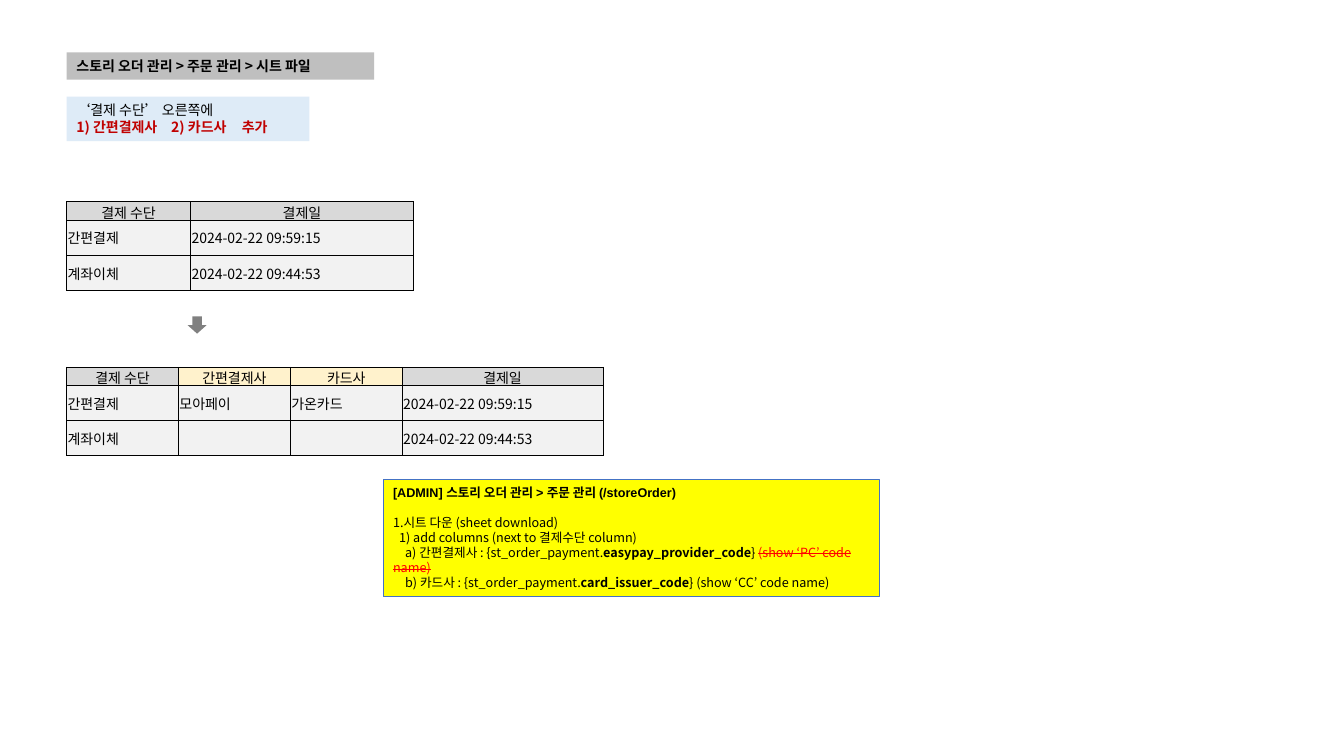
from lxml import etree
from pptx import Presentation
from pptx.dml.color import RGBColor
from pptx.enum.shapes import MSO_SHAPE
from pptx.enum.text import MSO_ANCHOR, MSO_AUTO_SIZE, PP_ALIGN
from pptx.oxml.ns import qn
from pptx.util import Inches, Pt

RECT, DOWN = MSO_SHAPE.RECTANGLE, MSO_SHAPE.DOWN_ARROW
TOP, MIDDLE, BOTTOM = MSO_ANCHOR.TOP, MSO_ANCHOR.MIDDLE, MSO_ANCHOR.BOTTOM
LEFT, CENTER = PP_ALIGN.LEFT, PP_ALIGN.CENTER
GROW = MSO_AUTO_SIZE.SHAPE_TO_FIT_TEXT

SANS, LATIN = "Noto Sans CJK KR", "Arial"
COLORS = {
    "text": "000000", "title": "BFBFBF", "note": "DEEBF7", "alert": "C00000",
    "head": "D9D9D9", "new": "FFF2CC", "body": "F2F2F2", "arrow": "808080",
    "admin": "FFFF00", "edge": "4472C4", "strike": "FF0000",
}
MARGIN = 0.66
ROWS = [0.18, 0.35, 0.35]


def rgb(name):
    return RGBColor.from_string(COLORS[name])


def paint(item, name):
    item.fill.solid()
    item.fill.fore_color.rgb = rgb(name)


def style(para, size=10, font=SANS, color="text", bold=False, align=LEFT,
          indent=0, before=0, tabs=()):
    """Set layout first, then the font shared by the paragraph."""
    para.alignment = align
    props = para._p.get_or_add_pPr()
    if indent:
        props.set("marL", "0")
        props.set("indent", str(Inches(indent)))
    if before:
        para.space_before = Pt(before)
    if tabs:
        stops = etree.SubElement(props, qn("a:tabLst"))
        for pos in tabs:
            etree.SubElement(stops, qn("a:tab"), pos=str(Inches(pos)), algn="l")
    para.font.size, para.font.name, para.font.bold = Pt(size), font, bold
    para.font.color.rgb = rgb(color)
    etree.SubElement(props.find(qn("a:defRPr")), qn("a:ea"), typeface=SANS)


def add_runs(para, parts):
    """Each part is a text and its mark: plain, bold or strike."""
    for text, mark in parts:
        run = para.add_run()
        run.text = text
        if mark == "bold":
            run.font.bold = True
        elif mark == "strike":
            run.font.color.rgb = rgb("strike")
            run.font._element.set("strike", "sngStrike")


def add_block(slide, kind, box, fill, line=None):
    shape = slide.shapes.add_shape(kind, *map(Inches, box))
    shape.shadow.inherit = False
    paint(shape, fill)
    if line:
        shape.line.color.rgb = rgb(line)
        shape.line.width = Pt(0.75)
    else:
        shape.line.fill.background()
    return shape


def add_box(slide, box, fill, lines, line=None):
    """Each line is a list of parts and its paragraph style."""
    frame = add_block(slide, RECT, box, fill, line).text_frame
    frame.word_wrap = True
    frame.auto_size = GROW
    frame.vertical_anchor = TOP
    for i, (parts, look) in enumerate(lines):
        para = frame.add_paragraph() if i else frame.paragraphs[0]
        style(para, **look)
        add_runs(para, parts)


def add_edges(cell):
    props = cell._tc.get_or_add_tcPr()
    for side in ("lnL", "lnR", "lnT", "lnB"):
        edge = etree.SubElement(props, qn("a:" + side), w=str(Pt(0.25)))
        fill = etree.SubElement(edge, qn("a:solidFill"))
        etree.SubElement(fill, qn("a:srgbClr"), val=COLORS["text"])


def add_grid(slide, top, cols, data, new=()):
    """Draw a table; the columns listed in new get a tinted head."""
    table = slide.shapes.add_table(
        len(data), len(cols), Inches(MARGIN), Inches(top),
        Inches(sum(cols)), Inches(sum(ROWS))).table
    for col, width in zip(table.columns, cols):
        col.width = Inches(width)
    for r, (row, height) in enumerate(zip(data, ROWS)):
        table.rows[r].height = Inches(height)
        for c, text in enumerate(row):
            cell = table.cell(r, c)
            cell.margin_left = cell.margin_right = Inches(0.01)
            cell.margin_top, cell.margin_bottom = Inches(0.01), 0
            cell.vertical_anchor = MIDDLE if r else BOTTOM
            add_edges(cell)
            paint(cell, "body" if r else "new" if c in new else "head")
            para = cell.text_frame.paragraphs[0]
            style(para, align=LEFT if r else CENTER)
            if text:
                add_runs(para, [(text, "plain")])


def main():
    prs = Presentation()
    prs.slide_width, prs.slide_height = Inches(13.33), Inches(7.5)
    slide = prs.slides.add_slide(prs.slide_layouts[6])

    # Title and request
    add_box(slide, (MARGIN, 0.52, 3.05, 0.27), "title", [
        ([("스토리 오더 관리 > 주문 관리 > 시트 파일", "plain")], {"bold": True}),
    ])
    add_box(slide, (MARGIN, 0.96, 2.41, 0.44), "note", [
        ([("‘결제 수단’ 오른쪽에", "plain")], {}),
        ([("1) 간편결제사\t2) 카드사\t추가", "plain")],
         {"color": "alert", "bold": True, "tabs": (0.94, 1.64)}),
    ])

    # Columns before and after
    first, second = "2024-02-22 09:59:15", "2024-02-22 09:44:53"
    add_grid(slide, 2, [1.23, 2.21], [
        ["결제 수단", "결제일"],
        ["간편결제", first],
        ["계좌이체", second],
    ])
    add_block(slide, DOWN, (1.86, 3.14, 0.19, 0.17), "arrow")
    add_grid(slide, 3.64, [1.11, 1.11, 1.11, 1.99], [
        ["결제 수단", "간편결제사", "카드사", "결제일"],
        ["간편결제", "모아페이", "가온카드", first],
        ["계좌이체", "", "", second],
    ], new=(1, 2))

    # Admin note
    small = {"size": 9}
    deep = {"size": 9, "indent": 0.12}
    add_box(slide, (3.8, 4.76, 4.92, 1.16), "admin", [
        ([("[ADMIN] 스토리 오더 관리 > 주문 관리 (/storeOrder)", "plain")],
         {**small, "font": LATIN, "bold": True}),
        ([("1.시트 다운 (sheet download)", "plain")], {**small, "before": 10.5}),
        ([("1) add columns (next to 결제수단 column)", "plain")],
         {**small, "indent": 0.06}),
        ([("a) 간편결제사 : {st_order_payment.", "plain"),
          ("easypay_provider_code", "bold"), ("} ", "plain"),
          ("(show ‘PC’ code name)", "strike")], deep),
        ([("b) 카드사 : {st_order_payment.", "plain"),
          ("card_issuer_code", "bold"),
          ("} (show ‘CC’ code name)", "plain")], deep),
    ], line="edge")

    prs.save("out.pptx")


if __name__ == "__main__":
    main()
